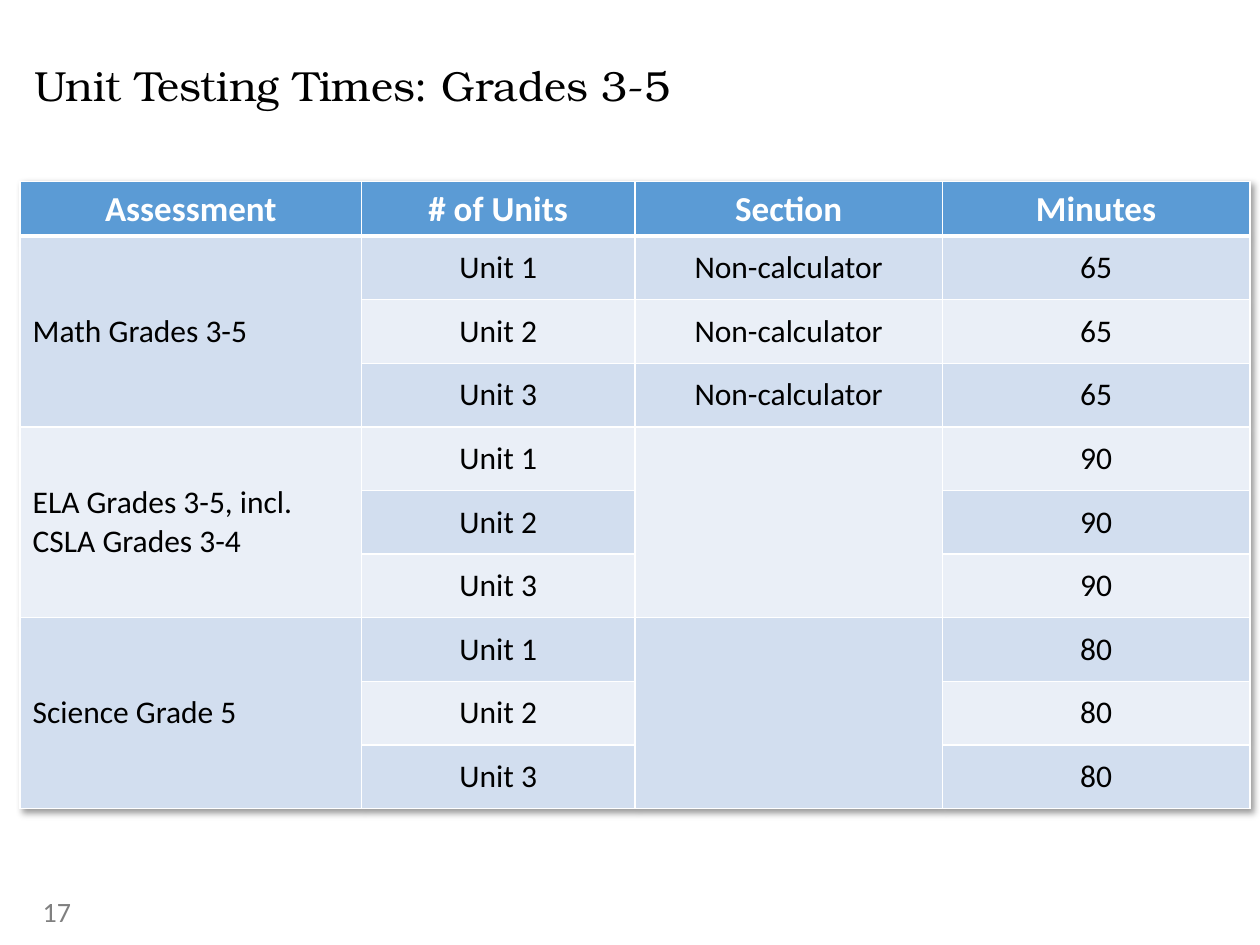
from dataclasses import dataclass

from lxml import etree
from pptx import Presentation
from pptx.dml.color import RGBColor
from pptx.enum.text import MSO_ANCHOR as Anchor, MSO_AUTO_SIZE as AutoSize, PP_ALIGN as Align
from pptx.oxml import parse_xml
from pptx.oxml.ns import nsdecls, qn
from pptx.util import Inches, Pt


@dataclass(frozen=True)
class Theme:
    title_font: str = "TeX Gyre Bonum"
    body_font: str = "Calibri"
    title_size: int = 24
    header_size: int = 20
    body_size: int = 18
    number_size: int = 16
    black: str = "000000"
    white: str = "FFFFFF"
    gray: str = "808080"
    header_fill: str = "5B9BD5"
    bands: tuple = ("EAEFF7", "D2DEEF")


THEME = Theme()

HEADERS = ("Assessment", "# of Units", "Section", "Minutes")
# Assessment, section of each unit, minutes of each unit
ASSESSMENTS = (
    ("Math Grades 3-5", "Non-calculator", 65),
    ("ELA Grades 3-5, incl. CSLA Grades 3-4", "", 90),
    ("Science Grade 5", "", 80),
)
UNITS = 3
COLUMN_WIDTHS = (2.71, 2.17, 2.44, 2.44)
HEADER_HEIGHT, ROW_HEIGHT = 0.43, 0.505


def write_text(text_frame, text, font_name, size, color, align=Align.LEFT, bold=False):
    text_frame.text = text
    paragraph = text_frame.paragraphs[0]
    paragraph.alignment = align
    paragraph.font.size = Pt(size)
    for run in paragraph.runs:
        run.font.name = font_name
        run.font.size = Pt(size)
        run.font.bold = bold
        run.font.color.rgb = RGBColor.from_string(color)


def place(shape, left, top, width, height):
    shape.left, shape.top = Inches(left), Inches(top)
    shape.width, shape.height = Inches(width), Inches(height)


def add_title(slide, text):
    title = slide.shapes.title
    place(title, 0.27, 0.28, 6.65, 0.83)
    frame = title.text_frame
    write_text(frame, text, THEME.title_font, THEME.title_size, THEME.black)
    frame.paragraphs[0].line_spacing = 0.9
    frame.margin_left = frame.margin_right = frame.margin_top = frame.margin_bottom = 0
    frame.vertical_anchor = Anchor.MIDDLE
    frame.auto_size = AutoSize.NONE


def add_slide_number(slide, text):
    box = slide.shapes.add_textbox(Inches(0.24), Inches(7.03), Inches(2.25), Inches(0.4))
    box.text_frame.word_wrap = True
    box.text_frame.vertical_anchor = Anchor.MIDDLE
    write_text(box.text_frame, text, THEME.body_font, THEME.number_size, THEME.gray)


def set_borders(cell, **widths):
    properties = cell._tc.get_or_add_tcPr()
    for side in "LRTB":
        line = etree.SubElement(properties, qn(f"a:ln{side}"), w=str(Pt(widths.get(side, 1))))
        fill = etree.SubElement(line, qn("a:solidFill"))
        etree.SubElement(fill, qn("a:srgbClr"), val=THEME.white)


def style_cell(cell, row):
    # The header rule is heavier than the other borders
    set_borders(cell, **{0: {"B": 3}, 1: {"T": 3}}.get(row, {}))
    cell.fill.solid()
    color = THEME.bands[row % 2] if row else THEME.header_fill
    cell.fill.fore_color.rgb = RGBColor.from_string(color)
    cell.vertical_anchor = Anchor.MIDDLE
    if row:
        cell.margin_left = cell.margin_right = Inches(0.1)
        cell.margin_top = cell.margin_bottom = Inches(0.1)


def add_table_shadow(table):
    shadow = parse_xml(
        f'<a:effectLst {nsdecls("a")}>'
        '<a:outerShdw blurRad="50800" dist="38100" dir="2700000" algn="tl" rotWithShape="0">'
        '<a:srgbClr val="000000"><a:alpha val="40000"/></a:srgbClr>'
        "</a:outerShdw></a:effectLst>"
    )
    table._tbl.tblPr.insert(0, shadow)


def add_times_table(slide):
    row_count = 1 + UNITS * len(ASSESSMENTS)
    height = HEADER_HEIGHT + ROW_HEIGHT * (row_count - 1)
    table = slide.shapes.add_table(
        row_count, len(HEADERS), Inches(0.16), Inches(1.44),
        Inches(sum(COLUMN_WIDTHS)), Inches(height),
    ).table
    add_table_shadow(table)
    for column, width in zip(table.columns, COLUMN_WIDTHS):
        column.width = Inches(width)
    for index, row in enumerate(table.rows):
        row.height = Inches(ROW_HEIGHT if index else HEADER_HEIGHT)
        for cell in row.cells:
            style_cell(cell, index)

    # Header row
    for column, header in enumerate(HEADERS):
        write_text(table.cell(0, column).text_frame, header, THEME.body_font,
                   THEME.header_size, THEME.white, Align.CENTER, bold=True)

    # One block of unit rows per assessment
    for block, (assessment, section, minutes) in enumerate(ASSESSMENTS):
        first = 1 + block * UNITS
        last = first + UNITS - 1
        for unit in range(UNITS):
            values = ("" if unit else assessment, f"Unit {unit + 1}", section, str(minutes))
            for column, value in enumerate(values):
                write_text(table.cell(first + unit, column).text_frame, value,
                           THEME.body_font, THEME.body_size, THEME.black,
                           Align.CENTER if column else Align.LEFT)
        table.cell(first, 0).merge(table.cell(last, 0))
        if not section:
            table.cell(first, 2).merge(table.cell(last, 2))


def main():
    presentation = Presentation()
    presentation.slide_width, presentation.slide_height = Inches(10), Inches(7.5)
    title_only = presentation.slide_layouts[5]
    slide = presentation.slides.add_slide(title_only)
    add_title(slide, "Unit Testing Times: Grades 3-5")
    add_slide_number(slide, "17")
    add_times_table(slide)
    presentation.save("out.pptx")


if __name__ == "__main__":
    main()
